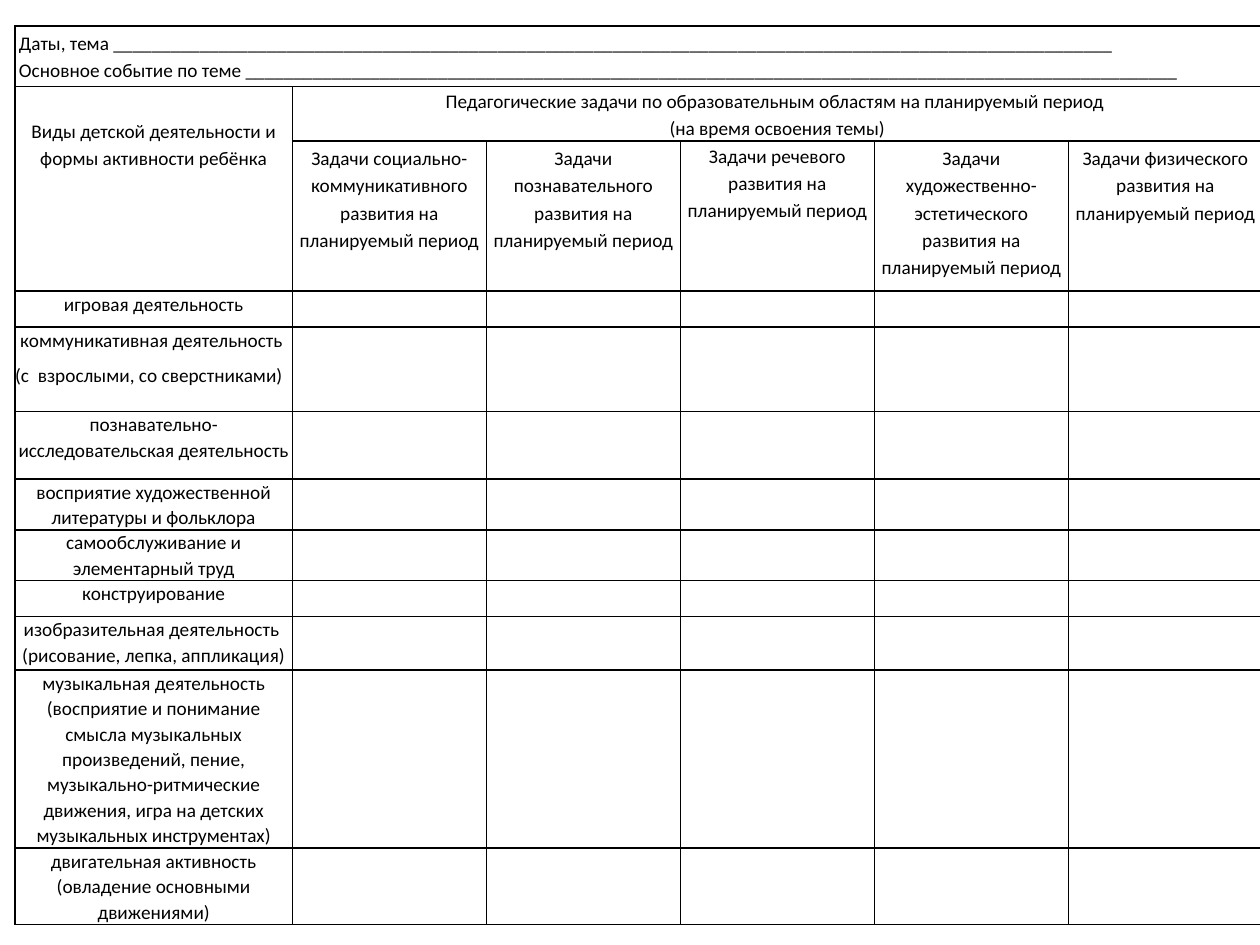
from lxml.etree import SubElement
from pptx import Presentation
from pptx.dml.color import RGBColor
from pptx.enum.text import PP_ALIGN
from pptx.oxml.ns import qn
from pptx.util import Pt

BLACK = RGBColor(0, 0, 0)
FONT = {"name": "Calibri", "size": Pt(11)}
CENTER, LEFT = PP_ALIGN.CENTER, PP_ALIGN.LEFT
TIGHT = dict.fromkeys(("margin_left", "margin_top", "margin_right", "margin_bottom"), 0)
PADDED = {"margin_left": Pt(2.16), "margin_top": Pt(1.44),
          "margin_right": Pt(2.16), "margin_bottom": Pt(1.44)}
LOWERED = {**PADDED, "margin_top": Pt(17)}
HEADER_SPACING, BODY_SPACING = 1.15, 1.07
COLUMN_WIDTHS = [158.4] + [110.88] * 5
ROW_HEIGHTS = [34.56, 28.08, 85.68, 20.6, 48.24, 38.6,
               25.92, 25.92, 20.6, 30.6, 90.72, 38.88]
FIRST_ACTIVITY_ROW = 3

HEADING = ["Даты, тема " + "_" * 104, "Основное событие по теме " + "_" * 97]
ACTIVITY_TITLE = ["Виды детской деятельности и формы активности ребёнка"]
TASKS_TITLE = [
    "Педагогические задачи по образовательным областям на планируемый период ",
    "(на время освоения темы)",
]
TASKS = [
    ("социально-коммуникативного", PADDED),
    ("познавательного", PADDED),
    ("речевого", TIGHT),
    ("художественно-эстетического", PADDED),
    ("физического", PADDED),
]
ACTIVITIES = [
    ["игровая деятельность"],
    ["коммуникативная деятельность ", "(с  взрослыми, со сверстниками)"],
    ["познавательно-исследовательская деятельность"],
    ["восприятие художественной литературы и фольклора"],
    ["самообслуживание и элементарный труд"],
    ["конструирование"],
    ["изобразительная деятельность ", "(рисование, лепка, аппликация)"],
    ["музыкальная деятельность",
     "(восприятие и понимание смысла музыкальных произведений, пение, "
     "музыкально-ритмические движения, игра на детских музыкальных инструментах)"],
    ["двигательная активность (овладение основными движениями)"],
]


def set_attributes(target, values):
    for name, value in values.items():
        setattr(target, name, value)


def format_cell(cell):
    properties = cell._tc.get_or_add_tcPr()
    for side in ("a:lnL", "a:lnR", "a:lnT", "a:lnB"):
        border = SubElement(properties, qn(side), w=str(Pt(1)))
        fill = SubElement(border, qn("a:solidFill"))
        SubElement(fill, qn("a:srgbClr"), val=str(BLACK))
    cell.fill.background()
    set_attributes(cell, TIGHT)
    cell.text_frame.paragraphs[0]._p.get_or_add_endParaRPr().set("sz", "1100")


def write_cell(cell, lines, margins, align, spacing):
    set_attributes(cell, margins)
    cell.text_frame.text = "\n".join(lines)
    for paragraph in cell.text_frame.paragraphs:
        set_attributes(paragraph, {"alignment": align, "line_spacing": spacing})
        for run in paragraph.runs:
            set_attributes(run.font, FONT)
            run.font.color.rgb = BLACK


def write_header(table):
    last = len(COLUMN_WIDTHS) - 1
    table.cell(0, 0).merge(table.cell(0, last))
    table.cell(1, 0).merge(table.cell(2, 0))
    table.cell(1, 1).merge(table.cell(1, last))
    write_cell(table.cell(0, 0), HEADING, PADDED, LEFT, HEADER_SPACING)
    write_cell(table.cell(1, 0), ACTIVITY_TITLE, LOWERED, CENTER, HEADER_SPACING)
    write_cell(table.cell(1, 1), TASKS_TITLE, TIGHT, CENTER, HEADER_SPACING)
    for column, (area, margins) in enumerate(TASKS, 1):
        task = f"Задачи {area} развития на планируемый период"
        write_cell(table.cell(2, column), [task], margins, CENTER, HEADER_SPACING)


def write_activities(table):
    for row, lines in enumerate(ACTIVITIES, FIRST_ACTIVITY_ROW):
        write_cell(table.cell(row, 0), lines, TIGHT, CENTER, BODY_SPACING)
    partners = table.cell(FIRST_ACTIVITY_ROW + 1, 0).text_frame.paragraphs[1]
    set_attributes(partners, {"alignment": LEFT, "line_spacing": 1.5})


def add_plan(slide, left, top, width, height):
    frame = slide.shapes.add_table(len(ROW_HEIGHTS), len(COLUMN_WIDTHS),
                                   left, top, width, height)
    table = frame.table
    set_attributes(table, {"first_row": False, "horz_banding": False})
    for column, column_width in zip(table.columns, COLUMN_WIDTHS):
        column.width = Pt(column_width)
    for row, row_height in zip(table.rows, ROW_HEIGHTS):
        row.height = Pt(row_height)
    for cell in table.iter_cells():
        format_cell(cell)
    write_header(table)
    write_activities(table)
    set_attributes(frame, {"width": width, "height": height})


def main():
    presentation = Presentation()
    set_attributes(presentation, {"slide_width": Pt(720), "slide_height": Pt(540)})
    slide = presentation.slides.add_slide(presentation.slide_layouts[6])
    add_plan(slide, Pt(8.64), Pt(14.9), Pt(711.36), Pt(506.88))
    presentation.save("out.pptx")


if __name__ == "__main__":
    main()
